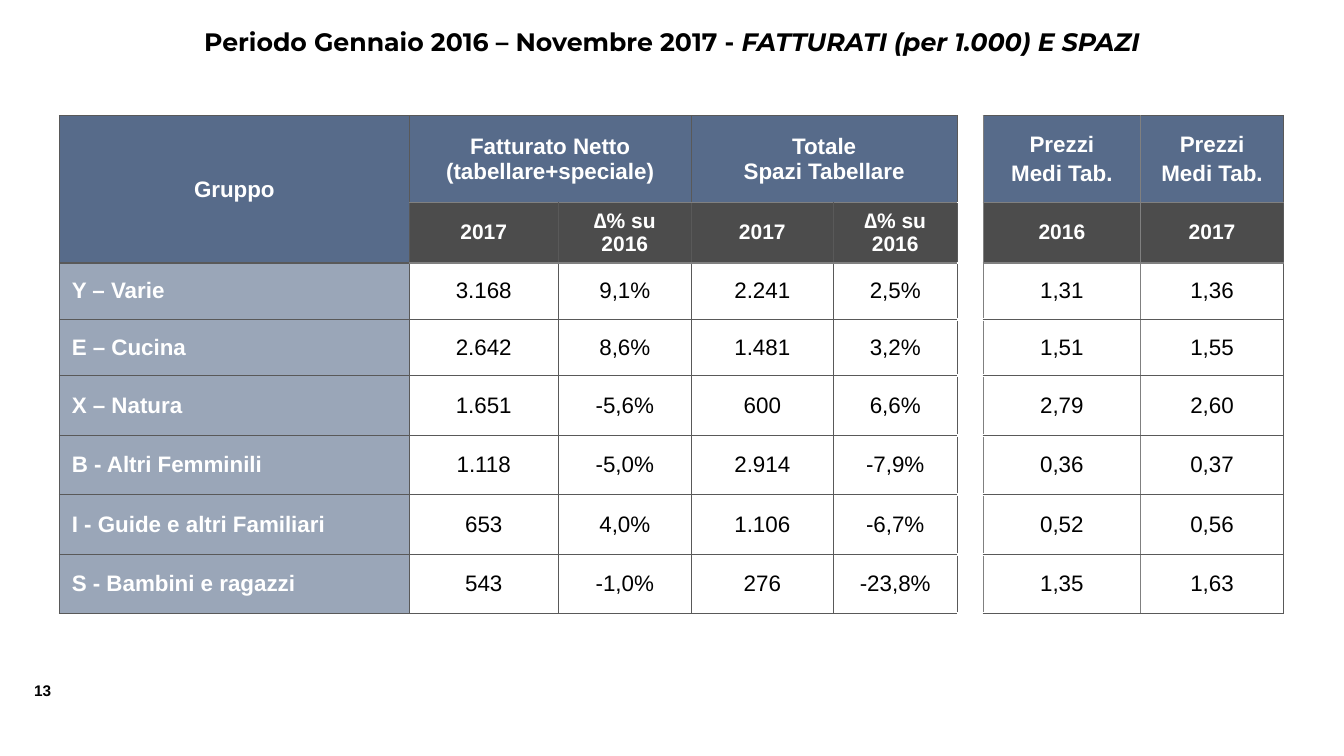
from lxml import etree
from pptx import Presentation
from pptx.dml.color import RGBColor
from pptx.enum.text import MSO_ANCHOR, MSO_AUTO_SIZE, PP_ALIGN
from pptx.oxml.ns import qn
from pptx.util import Cm, Pt

LEFT, CENTER = PP_ALIGN.LEFT, PP_ALIGN.CENTER
MIDDLE = MSO_ANCHOR.MIDDLE
GROW, FIXED = MSO_AUTO_SIZE.SHAPE_TO_FIT_TEXT, MSO_AUTO_SIZE.NONE

BLACK = RGBColor(0x00, 0x00, 0x00)
WHITE = RGBColor(0xFF, 0xFF, 0xFF)
BLUE = RGBColor(0x57, 0x6B, 0x8A)
DARK = RGBColor(0x59, 0x59, 0x59)
GREY = RGBColor(0x80, 0x80, 0x80)

GAP = 5
WIDTHS = [8.81, 3.76, 3.35, 3.58, 3.12, 0.66, 3.96, 3.61]
HEIGHTS = [2.18, 1.52, 1.42, 1.42, 1.5, 1.5, 1.5, 1.5]
PRICE = "Prezzi\nMedi Tab."
DELTA = "∆% su 2016"
ROWS = [
    ["Gruppo", "Fatturato Netto (tabellare+speciale)", "", "Totale\nSpazi Tabellare", "", "", PRICE, PRICE],
    ["", "2017", DELTA, "2017", DELTA, "", "2016", "2017"],
    ["Y – Varie", "3.168", "9,1%", "2.241", "2,5%", "", "1,31", "1,36"],
    ["E – Cucina", "2.642", "8,6%", "1.481", "3,2%", "", "1,51", "1,55"],
    ["X – Natura", "1.651", "-5,6%", "600", "6,6%", "", "2,79", "2,60"],
    ["B - Altri Femminili", "1.118", "-5,0%", "2.914", "-7,9%", "", "0,36", "0,37"],
    ["I - Guide e altri Familiari", "653", "4,0%", "1.106", "-6,7%", "", "0,52", "0,56"],
    ["S - Bambini e ragazzi", "543", "-1,0%", "276", "-23,8%", "", "1,35", "1,63"],
]


def write(frame, text, size=16, color=BLACK, bold=True, align=CENTER, font="Arial", gap=0):
    for n, line in enumerate(text.split("\n")):
        para = frame.add_paragraph() if n else frame.paragraphs[0]
        para.alignment = align
        para.space_before = Pt(gap if n else 0)
        run = para.add_run()
        run.text = line
        run.font.name = font
        run.font.size = Pt(size)
        run.font.bold = bold
        run.font.color.rgb = color
    return run


def edge(cell, side, color, width=1):
    line = etree.SubElement(cell._tc.get_or_add_tcPr(), qn("a:ln" + side), w=str(Pt(width)))
    fill = etree.SubElement(line, qn("a:solidFill"))
    etree.SubElement(fill, qn("a:srgbClr"), val=str(color))


deck = Presentation()
deck.slide_width, deck.slide_height = Cm(33.87), Cm(19.05)
slide = deck.slides.add_slide(deck.slide_layouts[5])

title = slide.shapes.title
title.left, title.top, title.width, title.height = Cm(3.86), Cm(0.53), Cm(26.15), Cm(1.02)
title.text_frame.auto_size = FIXED
title.text_frame.vertical_anchor = MIDDLE
write(title.text_frame, "Periodo Gennaio 2016 – Novembre 2017 - ", size=18, font="Montserrat")
tail = title.text_frame.paragraphs[0].add_run()
tail.text = "FATTURATI (per 1.000) E SPAZI"
tail.font.name, tail.font.size = "Montserrat", Pt(18)
tail.font.bold = tail.font.italic = True
tail.font.color.rgb = BLACK

page = slide.shapes.add_textbox(Cm(0.61), Cm(17.04), Cm(1.07), Cm(0.74))
page.text_frame.word_wrap = False
page.text_frame.auto_size = GROW
write(page.text_frame, "13", size=11, align=LEFT)

grid = slide.shapes.add_table(len(ROWS), len(WIDTHS), Cm(1.5), Cm(2.92), Cm(sum(WIDTHS)), Cm(sum(HEIGHTS))).table
grid.first_row = grid.horz_banding = False
for col, width in zip(grid.columns, WIDTHS):
    col.width = Cm(width)
for row, height in zip(grid.rows, HEIGHTS):
    row.height = Cm(height)
grid.cell(0, 0).merge(grid.cell(1, 0))
for c in (1, 3):
    grid.cell(0, c).merge(grid.cell(0, c + 1))

for r, row in enumerate(ROWS):
    for c, text in enumerate(row):
        cell = grid.cell(r, c)
        cell.vertical_anchor = MIDDLE
        body, name = r > 1, c == 0
        if body:
            cell.margin_left = Cm(0.31 if name else 0)
            cell.margin_right = cell.margin_top = cell.margin_bottom = 0

        edge(cell, "L", GREY if c > GAP else DARK)
        edge(cell, "R", GREY if c in (GAP, GAP + 1) else DARK)
        for side, line in (("T", r), ("B", r + 1)):
            if c == GAP:
                edge(cell, side, WHITE, 2.25 if line > 2 else 1)
            else:
                edge(cell, side, GREY if line in (1, 2) and not name else DARK)

        if body and not name and c != GAP:
            cell.fill.background()
        else:
            cell.fill.solid()
            tone, alpha = BLUE, 60 if body else 100
            if c == GAP:
                tone, alpha = WHITE, 100
            elif r == 1 and not name:
                tone, alpha = BLACK, 70
            cell.fill.fore_color.rgb = tone
            if alpha < 100:
                shade = cell._tc.tcPr.find(qn("a:solidFill"))[0]
                etree.SubElement(shade, qn("a:alpha"), val=str(alpha * 1000))

        if text:
            head = name or not body
            write(cell.text_frame, text, size=15 if r == 1 else 16, color=WHITE if head else BLACK,
                  bold=head, align=LEFT if name and body else CENTER, gap=3 if text == PRICE else 0)

deck.save("out.pptx")
